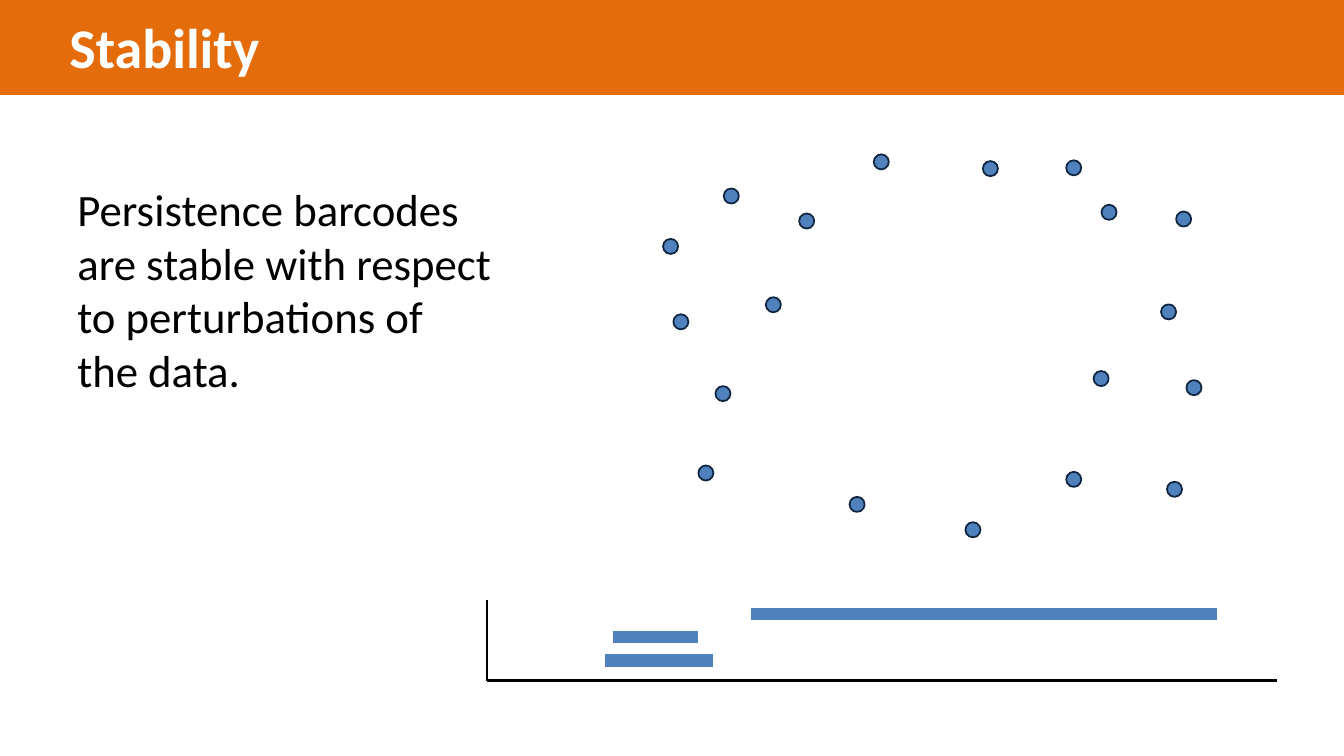
"""Build a slide on the stability of persistence barcodes."""
from dataclasses import dataclass

from lxml.etree import SubElement
from pptx import Presentation
from pptx.dml.color import RGBColor
from pptx.enum.shapes import MSO_CONNECTOR as Connector, MSO_SHAPE as Shape
from pptx.enum.text import MSO_AUTO_SIZE as AutoSize
from pptx.oxml.ns import qn
from pptx.util import Cm, Pt


@dataclass(frozen=True)
class Theme:
    font: str = "Calibri"
    banner: RGBColor = RGBColor(0xE4, 0x6C, 0x0A)
    data: RGBColor = RGBColor(0x4F, 0x81, 0xBD)
    outline: RGBColor = RGBColor(0x0F, 0x24, 0x3E)
    ink: RGBColor = RGBColor(0, 0, 0)
    paper: RGBColor = RGBColor(0xFF, 0xFF, 0xFF)
    title_size: Pt = Pt(40)
    body_size: Pt = Pt(32)
    point_line: Pt = Pt(1.25)
    axis_line: Pt = Pt(1.75)
    bar_line: Pt = Pt(9)


theme = Theme()
deck = Presentation()
deck.slide_width, deck.slide_height = Cm(33.87), Cm(19.05)
slide = deck.slides.add_slide(deck.slide_layouts[6])


def draw_line(x1, y1, x2, y2, color, width):
    line = slide.shapes.add_connector(Connector.STRAIGHT, Cm(x1), Cm(y1), Cm(x2), Cm(y2))
    line.line.color.rgb = color
    line.line.width = width
    SubElement(line._element.spPr, qn("a:effectLst"))


def write_text(words, left, top, width, height, size, color, bold, wrap):
    box = slide.shapes.add_textbox(Cm(left), Cm(top), Cm(width), Cm(height))
    box.text_frame.word_wrap = wrap
    box.text_frame.auto_size = AutoSize.SHAPE_TO_FIT_TEXT
    run = box.text_frame.paragraphs[0].add_run()
    run.text = words
    run.font.name = theme.font
    run.font.size = size
    run.font.bold = bold
    run.font.color.rgb = color


point_size = 0.38
cloud = [
    (16.71, 6.02), (20.14, 5.38), (22.02, 3.89), (24.77, 4.06), (26.87, 4.04),
    (29.9, 9.58), (26.87, 11.89), (24.33, 13.16), (21.41, 12.52), (17.6, 11.73),
    (16.97, 7.92), (27.56, 9.35), (18.03, 9.73), (29.26, 7.67), (27.76, 5.16),
    (29.41, 12.14), (19.3, 7.49), (18.24, 4.75), (29.64, 5.33),
]
for left, top in cloud:
    point = slide.shapes.add_shape(
        Shape.OVAL, Cm(left), Cm(top), Cm(point_size), Cm(point_size))
    point.shadow.inherit = False
    point.fill.solid()
    point.fill.fore_color.rgb = theme.data
    point.line.color.rgb = theme.outline
    point.line.width = theme.point_line

lowest_bar, bar_step = 16.64, 0.585
lifetimes = [(15.24, 17.98), (15.44, 17.58), (18.92, 30.68)]
for row, (birth, death) in enumerate(lifetimes):
    level = lowest_bar - row * bar_step
    draw_line(birth, level, death, level, theme.data, theme.bar_line)

origin_x, origin_y = 12.27, 17.15
draw_line(origin_x, origin_y, 32.18, origin_y, theme.ink, theme.axis_line)
draw_line(origin_x, 15.11, origin_x, origin_y, theme.ink, theme.axis_line)

banner = slide.shapes.add_shape(Shape.RECTANGLE, 0, 0, deck.slide_width, Cm(2.39))
banner.shadow.inherit = False
banner.fill.solid()
banner.fill.fore_color.rgb = theme.banner
banner.line.fill.background()

write_text("Stability", 1.5, 0.2, 5.36, 1.96,
           theme.title_size, theme.paper, bold=True, wrap=False)
write_text("Persistence barcodes are stable with respect to perturbations of the data.",
           1.7, 4.45, 11, 5.74, theme.body_size, theme.ink, bold=False, wrap=True)

deck.save("out.pptx")
